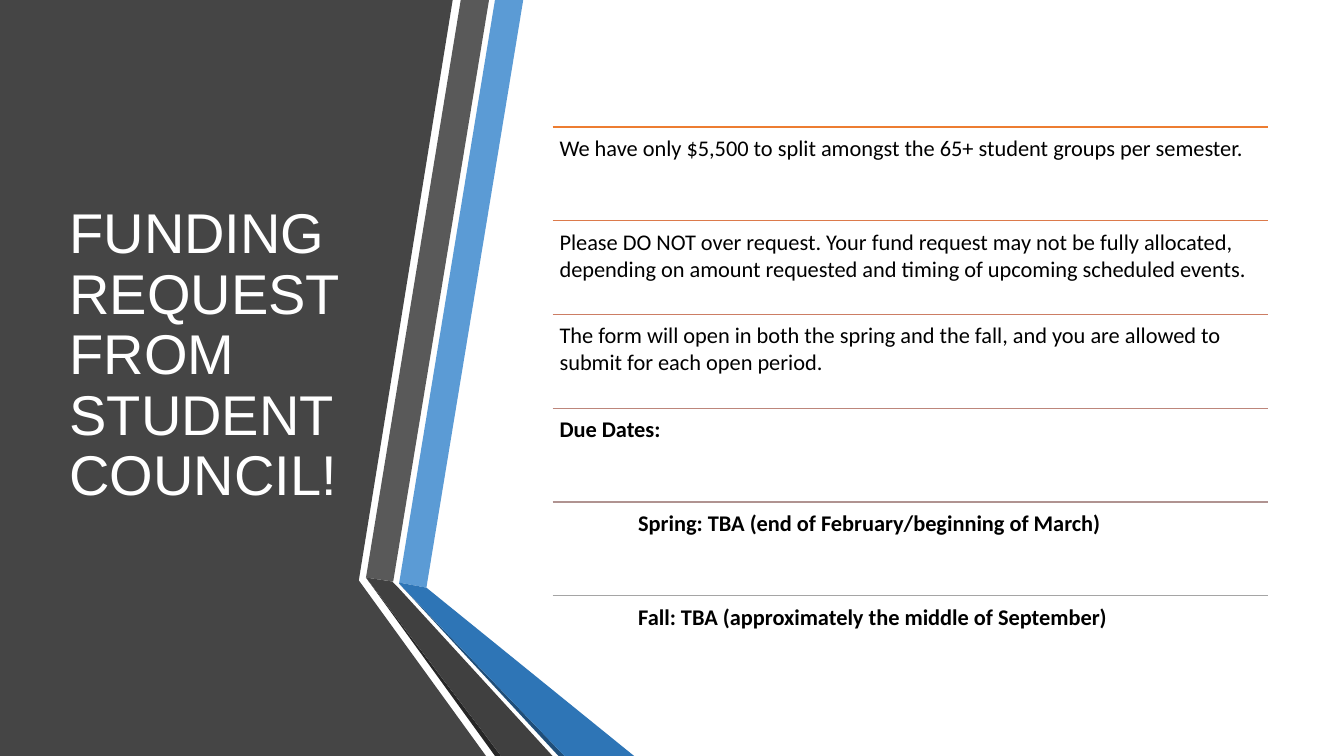
from dataclasses import dataclass

from lxml.etree import SubElement
from pptx import Presentation
from pptx.dml.color import RGBColor
from pptx.enum.shapes import MSO_CONNECTOR
from pptx.enum.text import MSO_ANCHOR, MSO_AUTO_SIZE, PP_ALIGN
from pptx.oxml.ns import qn
from pptx.slide import Slide
from pptx.text.text import TextFrame
from pptx.util import Inches, Pt

# Colours
WHITE = RGBColor(0xFF, 0xFF, 0xFF)
BLACK = RGBColor(0x00, 0x00, 0x00)
PANEL = RGBColor(0x45, 0x45, 0x45)
GREY = RGBColor(0x59, 0x59, 0x59)
GREY_DARK = RGBColor(0x40, 0x40, 0x40)
GREY_EDGE = RGBColor(0x26, 0x26, 0x26)
BLUE = RGBColor(0x5B, 0x9B, 0xD5)
BLUE_DARK = RGBColor(0x2E, 0x75, 0xB6)
BLUE_EDGE = RGBColor(0x1F, 0x4E, 0x79)
RULE_1 = RGBColor(0xED, 0x7D, 0x31)
RULE_2 = RGBColor(0xDC, 0x7A, 0x4B)
RULE_3 = RGBColor(0xCC, 0x7D, 0x64)
RULE_4 = RGBColor(0xBD, 0x86, 0x7B)
RULE_5 = RGBColor(0xB0, 0x93, 0x91)
RULE_6 = RGBColor(0xA5, 0xA5, 0xA5)

# Row grid, in inches
ROW_LEFT, ROW_TOP = 5.48, 1.26
ROW_WIDTH, ROW_HEIGHT = 7.1, 0.93
ROW_INSET = 0.07
TAB_STOP = 0.78


@dataclass(frozen=True)
class Band:
    color: RGBColor
    points: tuple[tuple[float, float], ...]


@dataclass(frozen=True)
class Row:
    text: str
    rule: RGBColor
    bold: bool = False


BANDS = (
    Band(PANEL, ((0, 0), (4.49, 0), (3.56, 5.75), (3.56, 5.76), (4.82, 7.5), (0, 7.5))),
    Band(BLUE, ((3.96, 5.78), (4.23, 5.83), (5.19, 0), (4.91, 0))),
    Band(GREY, ((4.85, 0), (4.57, 0), (3.63, 5.73), (3.9, 5.77))),
    Band(GREY_EDGE, ((3.63, 5.73), (4.91, 7.5), (4.97, 7.5))),
    Band(BLUE_EDGE, ((3.96, 5.79), (5.54, 7.5), (5.6, 7.5))),
    Band(BLUE_DARK, ((3.96, 5.79), (5.6, 7.5), (6.29, 7.5), (4.23, 5.83), (3.96, 5.78))),
    Band(GREY_DARK, ((5.48, 7.5), (3.95, 5.83), (3.89, 5.77), (3.63, 5.73), (4.97, 7.5))),
)

ROWS = (
    Row("We have only $5,500 to split amongst the 65+ student groups per semester.", RULE_1),
    Row("Please DO NOT over request. Your fund request may not be fully allocated, "
        "depending on amount requested and timing of upcoming scheduled events.", RULE_2),
    Row("The form will open in both the spring and the fall, and you are allowed to "
        "submit for each open period.", RULE_3),
    Row("Due Dates:", RULE_4, bold=True),
    Row("\tSpring: TBA (end of February/beginning of March)", RULE_5, bold=True),
    Row("\tFall: TBA (approximately the middle of September)", RULE_6, bold=True),
)


def set_text(tf: TextFrame, text: str, color: RGBColor, frame: dict, font: dict) -> None:
    for name, value in frame.items():
        setattr(tf, name, value)
    p = tf.paragraphs[0]
    p.alignment = PP_ALIGN.LEFT
    r = p.add_run()
    r.text = text
    for name, value in font.items():
        setattr(r.font, name, value)
    r.font.color.rgb = color


def add_band(s: Slide, band: Band) -> None:
    points = [(Inches(x), Inches(y)) for x, y in band.points]
    builder = s.shapes.build_freeform(*points[0])
    builder.add_line_segments(points[1:], close=True)
    sp = builder.convert_to_shape()
    sp.shadow.inherit = False
    sp.fill.solid()
    sp.fill.fore_color.rgb = band.color
    sp.line.fill.background()


def add_title(s: Slide, text: str) -> None:
    sp = s.shapes.title
    sp.left, sp.top, sp.width, sp.height = map(Inches, (0.59, 0.75, 3.04, 5.58))
    frame = {"word_wrap": True, "auto_size": MSO_AUTO_SIZE.NONE,
             "vertical_anchor": MSO_ANCHOR.MIDDLE}
    set_text(sp.text_frame, text, WHITE, frame, {"name": "Arial", "size": Pt(40)})
    sp.text_frame.paragraphs[0].line_spacing = 0.9
    # Bring the title in front of the dark panel
    s.shapes._spTree.append(sp._element)


def add_row(s: Slide, row: Row, top: float) -> None:
    # Rule above the row
    left, y = Inches(ROW_LEFT), Inches(top)
    rule = s.shapes.add_connector(
        MSO_CONNECTOR.STRAIGHT, left, y, Inches(ROW_LEFT + ROW_WIDTH), y)
    rule.line.color.rgb = row.rule
    rule.line.width = Pt(1)
    SubElement(rule._element.spPr, qn("a:effectLst"))

    # Row text
    sp = s.shapes.add_textbox(left, y, Inches(ROW_WIDTH), Inches(ROW_HEIGHT))
    tf = sp.text_frame
    if row.text.startswith("\t"):
        tabs = SubElement(tf.paragraphs[0]._p.get_or_add_pPr(), qn("a:tabLst"))
        SubElement(tabs, qn("a:tab"), pos=str(Inches(TAB_STOP)), algn="l")
    sides = ("left", "top", "right", "bottom")
    frame = {f"margin_{side}": Inches(ROW_INSET) for side in sides}
    frame |= {"word_wrap": True, "vertical_anchor": MSO_ANCHOR.TOP}
    set_text(tf, row.text, BLACK, frame,
             {"name": "Calibri", "size": Pt(16), "bold": row.bold})


def main() -> None:
    prs = Presentation()
    prs.slide_width, prs.slide_height = Inches(13.33), Inches(7.5)
    s = prs.slides.add_slide(prs.slide_layouts[5])

    # Folded bands on the left
    for band in BANDS:
        add_band(s, band)

    add_title(s, "FUNDING REQUEST FROM STUDENT COUNCIL!")

    # Ruled list on the right
    for i, row in enumerate(ROWS):
        add_row(s, row, ROW_TOP + i * ROW_HEIGHT)

    prs.save("out.pptx")


if __name__ == "__main__":
    main()
